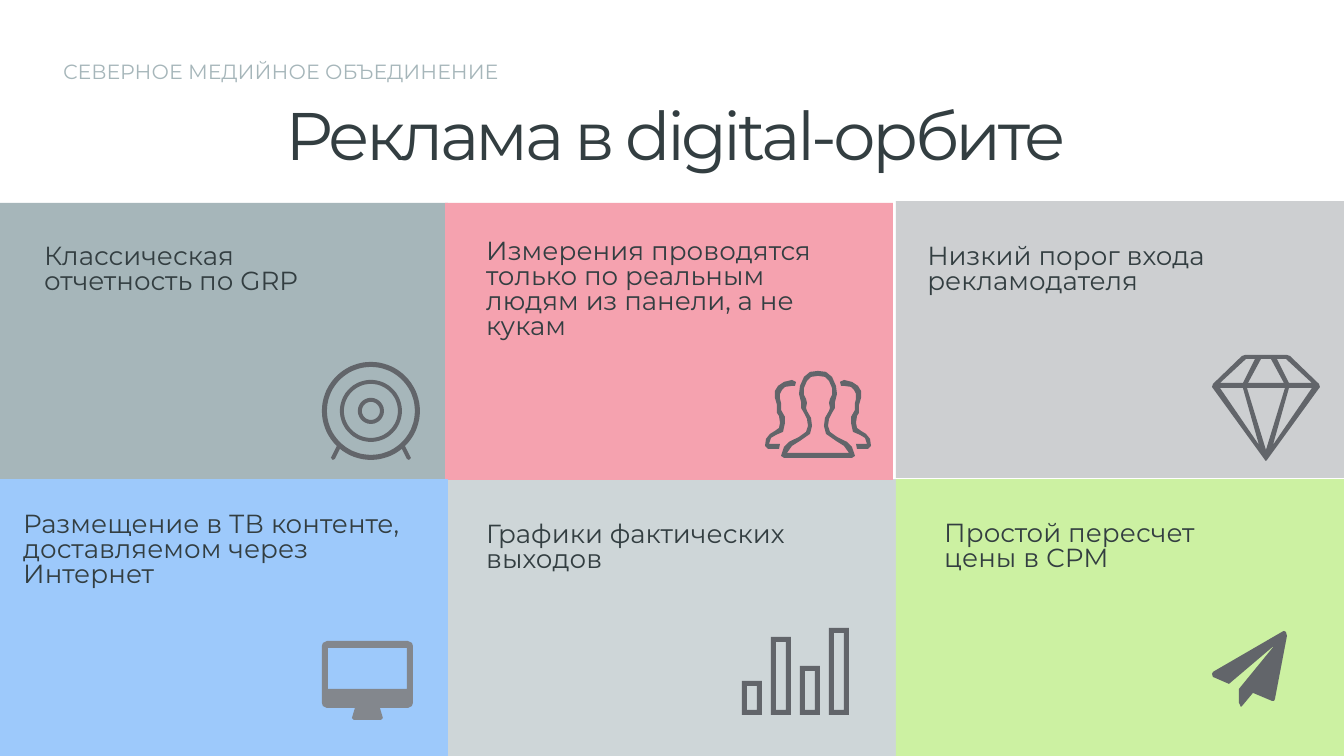
import math
from pptx import Presentation
from pptx import util as u
from pptx.dml.color import RGBColor
from pptx.enum import shapes, text

PX = 9144000 / 1344
FINE = 10
FONT = "Montserrat"
HUES = {
    "slate": "A6B6BA", "mist": "CED6D8", "pink": "F5A2AF", "lime": "CCF1A2",
    "silver": "CDCFD1", "sky": "9DC9FB", "ink": "333E41", "icon": "62656A",
    "screen": "83878D",
}
CARDS = [
    (0, 203, "slate"), (448, 479, "mist"), (445, 203, "pink"),
    (896, 479, "lime"), (896, 201, "silver"), (0, 479, "sky"),
]
NOTES = [
    (473, 234, 386, 90, "Измерения проводятся только по реальным людям из панели, а не кукам"),
    (473, 517, 375, 65, "Графики фактических выходов"),
    (931, 516, 353, 65, "Простой пересчет цены в СРМ"),
    (914, 239, 386, 65, "Низкий порог входа рекламодателя"),
    (31, 239, 353, 65, "Классическая отчетность по GRP"),
    (10, 507, 413, 65, "Размещение в ТВ контенте, доставляемом через Интернет"),
]


def px(n):
    return u.Emu(round(n * PX))


def hue(name):
    return RGBColor.from_string(HUES[name])


def paint(shape, color):
    shape.shadow.inherit = False
    shape.fill.solid()
    shape.fill.fore_color.rgb = hue(color)
    shape.line.fill.background()


def card(slide, x, y, color):
    box = slide.shapes.add_shape(
        shapes.MSO_SHAPE.RECTANGLE, px(x), px(y), px(448), px(277))
    paint(box, color)


def place(shape, x, y, w, h):
    shape.left, shape.top, shape.width, shape.height = map(px, (x, y, w, h))
    return shape


def write(shape, words, size=14, color="ink", align=None, lead=None, after=None,
          anchor=text.MSO_ANCHOR.TOP, flush=False, grow=False, track=None):
    frame = shape.text_frame
    frame.word_wrap = True
    fit = text.MSO_AUTO_SIZE
    frame.auto_size = fit.SHAPE_TO_FIT_TEXT if grow else fit.NONE
    frame.vertical_anchor = anchor
    if flush:
        frame.margin_left = frame.margin_right = 0
        frame.margin_top = frame.margin_bottom = 0
    para = frame.paragraphs[0]
    para.alignment = align
    para.line_spacing = lead
    if after is not None:
        para.space_after = u.Pt(after)
    run = para.add_run()
    run.text = words
    run.font.name = FONT
    run.font.size = u.Pt(size)
    run.font.color.rgb = hue(color)
    if track is not None:
        run.font._element.set("spc", str(track * 100))


def label(slide, x, y, w, h, words, **form):
    box = slide.shapes.add_textbox(px(x), px(y), px(w), px(h))
    write(box, words, **form)


def icon(slide, loops, color="icon"):
    fine = [[(x * FINE, y * FINE) for x, y in loop] for loop in loops]
    pen = slide.shapes.build_freeform(*fine[0][0], scale=PX / FINE)
    pen.add_line_segments(fine[0][1:], close=True)
    for loop in fine[1:]:
        pen.move_to(*loop[0])
        pen.add_line_segments(loop[1:], close=True)
    paint(pen.convert_to_shape(), color)


def flip(points, axis):
    return [(2 * axis - x, y) for x, y in reversed(points)]


def ring(x, y, r, count=72):
    turns = [2 * math.pi * i / count for i in range(count)]
    return [(x + r * math.cos(t), y + r * math.sin(t)) for t in turns]


def rect(l, t, r, b):
    return [(l, t), (r, t), (r, b), (l, b)]


def people(slide):
    mid = 818
    body = [(818, 371), (826, 372), (832, 377), (836, 386), (837, 394),
            (835, 402), (835, 408), (832, 413), (829, 419), (828, 426),
            (830, 432), (837, 437), (847, 442), (852, 447), (855, 456), (852, 458)]
    core = [(818, 376), (825, 377), (829, 381), (832, 388), (832, 395),
            (830, 399), (829, 403), (830, 408), (829, 411), (825, 418),
            (824, 426), (826, 434), (836, 441), (844, 446), (849, 453)]
    side = [(861, 431), (857, 428), (856, 423), (857, 416), (859, 413),
            (859, 405), (861, 398), (861, 391), (858, 386), (852, 382),
            (844, 380), (840, 382), (841, 386), (844, 386), (851, 387),
            (854, 390), (856, 394), (856, 399), (855, 403), (855, 410),
            (851, 417), (851, 423), (853, 432), (860, 435), (865, 438),
            (867, 444), (856, 444), (857, 449), (868, 449), (871, 446),
            (870, 439), (866, 434)]
    icon(slide, [body + flip(body, mid), core + flip(core, mid),
                 side, flip(side, mid)])


def bars(slide):
    loops = []
    for i, top in enumerate((681, 637, 666, 628)):
        x = 742 + 29 * i
        loops += [rect(x, top, x + 20, 715), rect(x + 5, top + 5, x + 15, 710)]
    icon(slide, loops)


def gem(slide):
    mid = 1266
    edge = [(1266, 355), (1287, 355), (1290, 356), (1319, 384),
            (1320, 387), (1267, 460), (1266, 461)]
    low = [(1273, 445), (1289, 388), (1312, 388)]
    high = [(1286, 359), (1312, 383), (1289, 383), (1277, 359)]
    icon(slide, [edge + flip(edge, mid), low, flip(low, mid), high, flip(high, mid),
                 [(1266, 450), (1247, 388), (1285, 388)],
                 [(1271, 359), (1284, 383), (1248, 383), (1261, 359)]])


def target(slide):
    x, y = 371, 411
    leg = [(337, 446), (332, 456), (331, 458), (333, 460), (335, 459), (340, 449)]
    rings = [ring(x, y, r) for r in (49, 44, 31, 27, 13, 9)]
    icon(slide, rings + [leg, flip(leg, x)])


def screen(slide):
    half = [(368, 641), (408, 641), (412, 643), (413, 646), (413, 703),
            (412, 706), (408, 708), (380, 708), (383, 718), (381, 720), (368, 720)]
    icon(slide, [half + flip(half, 367.5), rect(328, 648, 407, 689)], "screen")


def plane(slide):
    icon(slide, [[(1287, 636), (1275, 699), (1274, 701), (1272, 701),
                  (1253, 693), (1243, 705), (1241, 707), (1239, 703),
                  (1239, 689), (1275, 645), (1229, 684), (1213, 677),
                  (1212, 674), (1213, 672), (1282, 632), (1284, 631), (1286, 632)]])


def main():
    deck = Presentation()
    deck.slide_width, deck.slide_height = px(1344), px(756)
    slide = deck.slides.add_slide(deck.slide_layouts[5])
    for x, y, color in CARDS:
        card(slide, x, y, color)
    for x, y, w, h, words in NOTES:
        label(slide, x, y, w, h, words, lead=0.8, after=9, grow=True)
    title = place(slide.shapes.title, 4, 71, 1344, 140)
    write(title, "Реклама в digital-орбите", size=36, align=text.PP_ALIGN.CENTER,
          lead=0.8, anchor=text.MSO_ANCHOR.MIDDLE, flush=True, track=-2)
    for draw in (people, bars, gem, target, screen, plane):
        draw(slide)
    label(slide, 63, 59, 853, 30, "СЕВЕРНОЕ МЕДИЙНОЕ ОБЪЕДИНЕНИЕ",
          size=11, color="slate", flush=True)
    deck.save("out.pptx")


if __name__ == "__main__":
    main()
